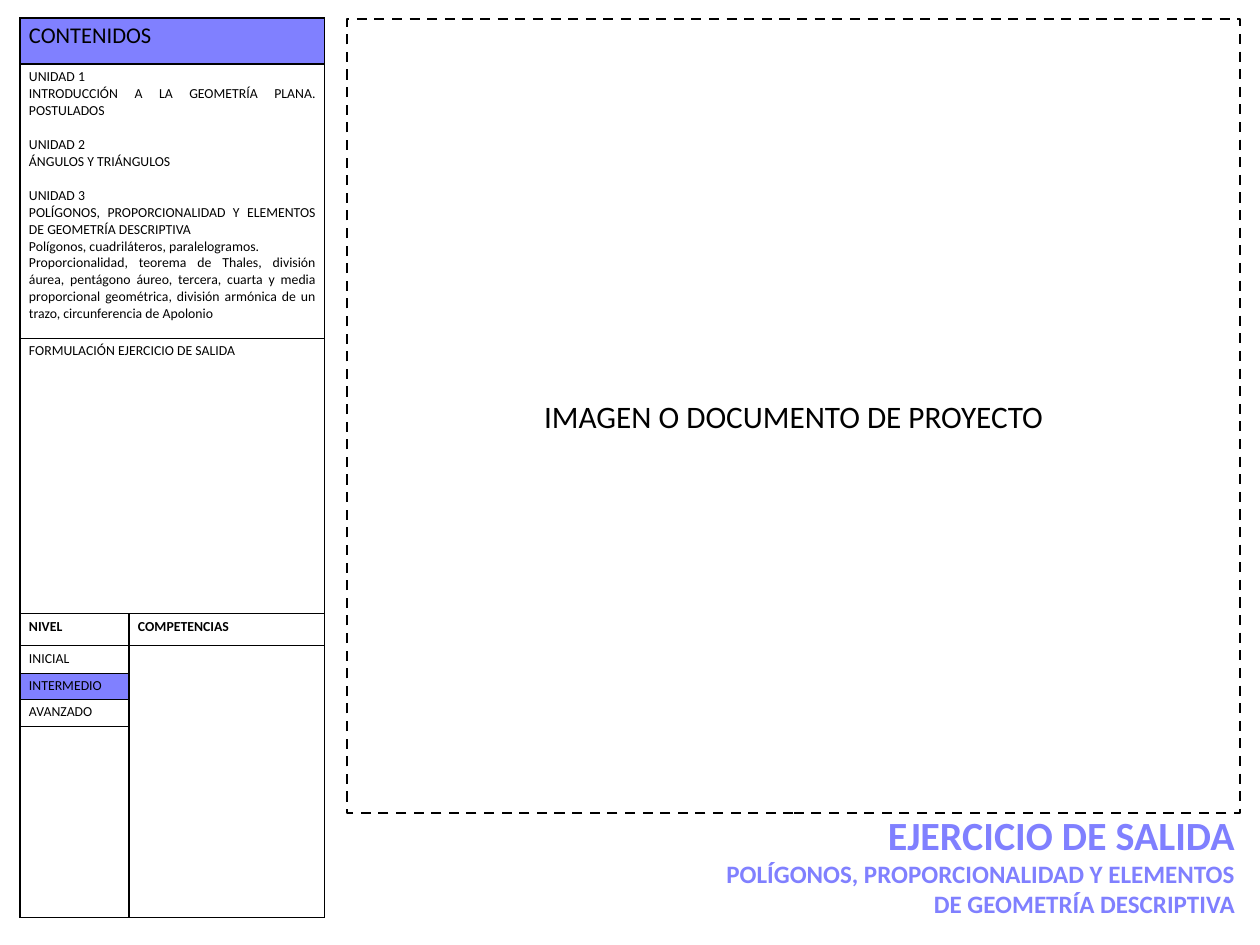
"""Build the exercise sheet: contents table, project frame and title."""
from dataclasses import dataclass
from typing import Any

from lxml.etree import SubElement
from pptx import Presentation
from pptx.dml.color import RGBColor
from pptx.enum.dml import MSO_LINE
from pptx.enum.shapes import MSO_SHAPE
from pptx.enum.text import MSO_ANCHOR, MSO_AUTO_SIZE, PP_ALIGN
from pptx.oxml import parse_xml
from pptx.oxml.ns import nsdecls, qn
from pptx.util import Emu, Pt

EMU_PER_PX = 914400 // 90


@dataclass(frozen=True)
class Theme:
    """Colours, font and type sizes of the sheet."""
    font: str = "Calibri"
    ink: str = "000000"
    paper: str = "FFFFFF"
    accent: str = "8080FF"
    title: int = 32
    subtitle: int = 20
    frame: int = 25
    heading: int = 18
    body: int = 11
    unit_gap: float = 13.4
    thick: float = 1
    thin: float = 0.5


@dataclass(frozen=True)
class Box:
    """A rectangle in px."""
    left: int
    top: int
    width: int
    height: int

    def emu(self) -> tuple[Emu, ...]:
        """Return the four lengths in EMU."""
        return tuple(px(value) for value in (self.left, self.top, self.width, self.height))


@dataclass(frozen=True)
class Entry:
    """One table cell with the number of rows and columns it covers."""
    row: int
    column: int
    lines: tuple[str, ...] = ()
    size: int = Theme.body
    bold: bool = False
    fill: str = Theme.paper
    rows: int = 1
    columns: int = 1


THEME = Theme()
TITLE_BOX = Box(689, 806, 555, 118)
FRAME_BOX = Box(347, 19, 893, 794)
TABLE_BOX = Box(20, 18, 305, 899)
COLUMN_WIDTHS = (109, 196)
ROW_HEIGHTS = (46, 274, 276, 32, 27, 26, 27, 191)
THIN_EDGES = {2, 5, 6, 7, 8}
TOPIC = "POLÍGONOS, PROPORCIONALIDAD Y ELEMENTOS DE GEOMETRÍA DESCRIPTIVA"
CONTENTS = (
    "UNIDAD 1",
    "INTRODUCCIÓN A LA GEOMETRÍA PLANA. POSTULADOS",
    "UNIDAD 2",
    "ÁNGULOS Y TRIÁNGULOS",
    "UNIDAD 3",
    TOPIC,
    "Polígonos, cuadriláteros, paralelogramos.",
    "Proporcionalidad, teorema de Thales, división áurea, pentágono áureo, tercera, "
    "cuarta y media proporcional geométrica, división armónica de un trazo, "
    "circunferencia de Apolonio",
)
ENTRIES = (
    Entry(0, 0, ("CONTENIDOS",), size=THEME.heading, fill=THEME.accent, columns=2),
    Entry(1, 0, CONTENTS, columns=2),
    Entry(2, 0, ("FORMULACIÓN EJERCICIO DE SALIDA",), columns=2),
    Entry(3, 0, ("NIVEL",), bold=True),
    Entry(3, 1, ("COMPETENCIAS",), bold=True),
    Entry(4, 0, ("INICIAL",)),
    Entry(4, 1, rows=4),
    Entry(5, 0, ("INTERMEDIO",), fill=THEME.accent),
    Entry(6, 0, ("AVANZADO",)),
    Entry(7, 0),
)


def px(value: int) -> Emu:
    """Turn px into EMU."""
    return Emu(value * EMU_PER_PX)


def apply(target: Any, values: dict[str, Any]) -> None:
    """Set every named attribute on the target."""
    for name, value in values.items():
        setattr(target, name, value)


def write(paragraph: Any, text: str, size: int, align: PP_ALIGN,
          color: str = THEME.ink, bold: bool = False) -> None:
    """Write one formatted run into a paragraph."""
    run = paragraph.add_run()
    apply(paragraph, {"alignment": align, "space_before": Pt(0)})
    apply(run, {"text": text})
    apply(run.font, {"name": THEME.font, "size": Pt(size), "bold": bold})
    run.font.color.rgb = RGBColor.from_string(color)


def draw_title(slide: Any) -> None:
    """Place the title and its topic in the title placeholder."""
    title = slide.shapes.title
    apply(title, dict(zip(("left", "top", "width", "height"), TITLE_BOX.emu())))
    frame = title.text_frame
    apply(frame, {"word_wrap": True, "auto_size": MSO_AUTO_SIZE.NONE,
                  "vertical_anchor": MSO_ANCHOR.TOP})
    write(frame.paragraphs[0], "EJERCICIO DE SALIDA", THEME.title,
          PP_ALIGN.RIGHT, THEME.accent, True)
    write(frame.add_paragraph(), TOPIC, THEME.subtitle, PP_ALIGN.RIGHT, THEME.accent, True)


def draw_frame(slide: Any) -> None:
    """Draw the dashed frame kept free for the project document."""
    shape = slide.shapes.add_shape(MSO_SHAPE.RECTANGLE, *FRAME_BOX.emu())
    shape.shadow.inherit = False
    shape.fill.background()
    shape.line.color.rgb = RGBColor.from_string(THEME.ink)
    apply(shape.line, {"width": Pt(2), "dash_style": MSO_LINE.DASH})
    apply(shape.text_frame, {"word_wrap": True, "vertical_anchor": MSO_ANCHOR.MIDDLE})
    write(shape.text_frame.paragraphs[0], "IMAGEN O DOCUMENTO DE PROYECTO",
          THEME.frame, PP_ALIGN.CENTER)


def edge_width(edge: int, column: int) -> float:
    """Return the line width of a horizontal table edge in points."""
    merged_top = column == 1 and edge == 4
    return THEME.thin if edge in THIN_EDGES and not merged_top else THEME.thick


def draw_borders(cell: Any, row: int, column: int) -> None:
    """Give a cell its four solid borders."""
    widths = {"lnL": THEME.thick, "lnR": THEME.thick,
              "lnT": edge_width(row, column), "lnB": edge_width(row + 1, column)}
    properties = cell._tc.get_or_add_tcPr()
    for index, (tag, width) in enumerate(widths.items()):
        properties.insert(index, parse_xml(
            f'<a:{tag} {nsdecls("a")} w="{Pt(width)}"><a:solidFill>'
            f'<a:srgbClr val="{THEME.ink}"/></a:solidFill></a:{tag}>'))


def fill_entry(table: Any, entry: Entry) -> None:
    """Merge, fill and write one table entry."""
    cell = table.cell(entry.row, entry.column)
    if entry.rows * entry.columns > 1:
        cell.merge(table.cell(entry.row + entry.rows - 1, entry.column + entry.columns - 1))
    cell.fill.solid()
    cell.fill.fore_color.rgb = RGBColor.from_string(entry.fill)
    for index, line in enumerate(entry.lines):
        frame = cell.text_frame
        paragraph = frame.add_paragraph() if index else frame.paragraphs[0]
        write(paragraph, line, entry.size, PP_ALIGN.JUSTIFY, bold=entry.bold)
        if index and line.startswith("UNIDAD"):
            paragraph.space_before = Pt(THEME.unit_gap)


def draw_table(slide: Any) -> None:
    """Draw the table of contents, levels and skills."""
    table = slide.shapes.add_table(
        len(ROW_HEIGHTS), len(COLUMN_WIDTHS), *TABLE_BOX.emu()).table
    apply(table, {"first_row": False, "horz_banding": False})
    for column, width in zip(table.columns, COLUMN_WIDTHS):
        column.width = px(width)
    for row, height in zip(table.rows, ROW_HEIGHTS):
        row.height = px(height)
    for entry in ENTRIES:
        fill_entry(table, entry)
    for row in range(len(ROW_HEIGHTS)):
        for column in range(len(COLUMN_WIDTHS)):
            cell = table.cell(row, column)
            draw_borders(cell, row, column)
            if not cell.text:
                SubElement(cell.text_frame.paragraphs[0]._p, qn("a:endParaRPr"),
                           sz=str(THEME.body * 100))


def main() -> None:
    """Build and save the presentation."""
    presentation = Presentation()
    apply(presentation, {"slide_width": px(1260), "slide_height": px(945)})
    slide = presentation.slides.add_slide(presentation.slide_layouts[5])
    draw_title(slide)
    draw_frame(slide)
    draw_table(slide)
    presentation.save("out.pptx")


if __name__ == "__main__":
    main()
